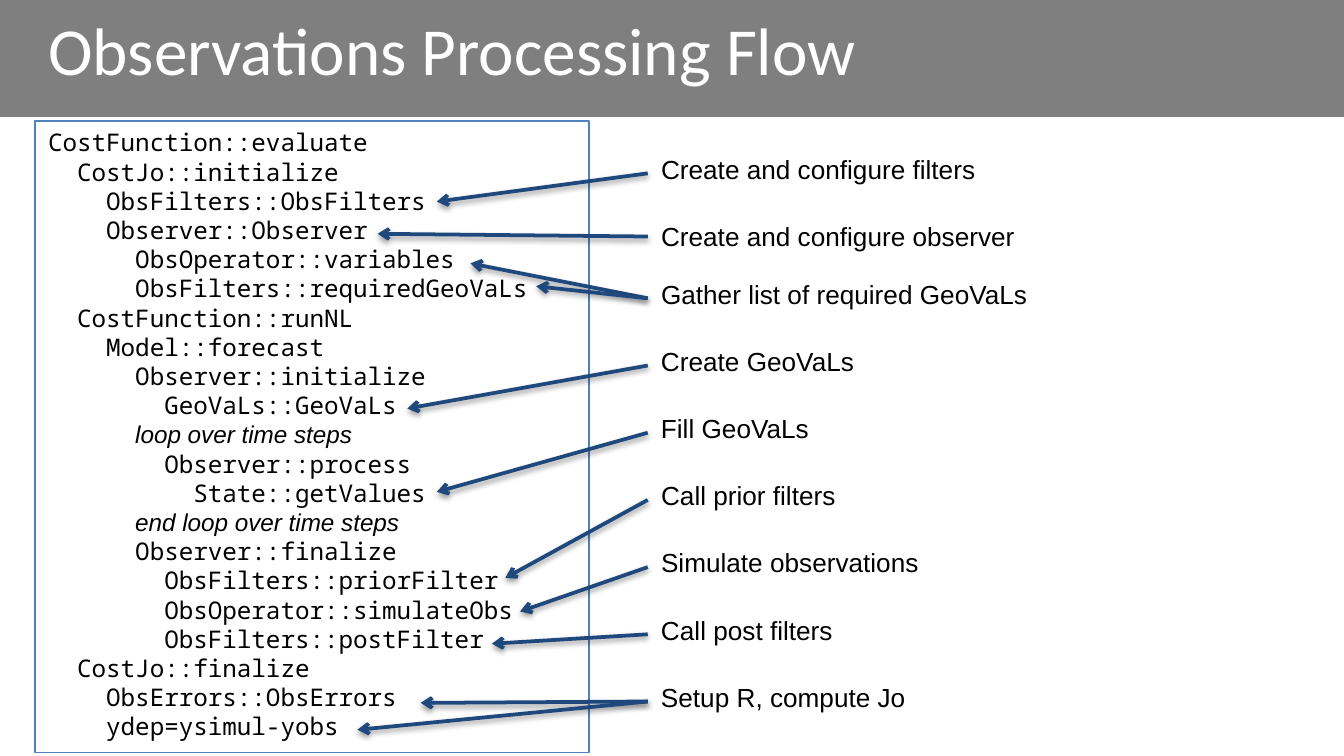
from dataclasses import dataclass

from lxml import etree
from pptx import Presentation
from pptx.dml.color import RGBColor
from pptx.enum.shapes import MSO_CONNECTOR, MSO_SHAPE
from pptx.enum.text import MSO_ANCHOR, PP_ALIGN
from pptx.oxml import parse_xml
from pptx.oxml.ns import nsdecls, qn
from pptx.shapes.autoshape import Shape
from pptx.slide import Slide
from pptx.text.text import _Paragraph
from pptx.util import Inches, Pt

RECTANGLE = MSO_SHAPE.RECTANGLE
STRAIGHT = MSO_CONNECTOR.STRAIGHT
LEFT = PP_ALIGN.LEFT
TOP = MSO_ANCHOR.TOP
MIDDLE = MSO_ANCHOR.MIDDLE
LEFT_SIDE = 1


@dataclass(frozen=True)
class Theme:
    black: RGBColor = RGBColor(0, 0, 0)
    white: RGBColor = RGBColor(255, 255, 255)
    border: RGBColor = RGBColor(0x4F, 0x81, 0xBD)
    arrow: RGBColor = RGBColor(0x1F, 0x49, 0x7D)
    title_font: str = "Calibri"
    code_font: str = "Noto Sans Mono"
    note_font: str = "Arial"
    title_size: float = 36
    code_size: float = 13
    note_size: float = 14
    code_pitch: float = 15.65


@dataclass(frozen=True)
class Call:
    depth: int
    text: str
    is_loop: bool = False


@dataclass(frozen=True)
class Note:
    text: str
    top: float
    width: float
    targets: tuple[tuple[float, float], ...]
    height: float = 0.4


THEME = Theme()
SLIDE_WIDTH = Inches(10)
SLIDE_HEIGHT = SLIDE_WIDTH * 9 // 16
NOTE_LEFT = 4.82

CALLS = (
    Call(0, "CostFunction::evaluate"),
    Call(1, "CostJo::initialize"),
    Call(2, "ObsFilters::ObsFilters"),
    Call(2, "Observer::Observer"),
    Call(3, "ObsOperator::variables"),
    Call(3, "ObsFilters::requiredGeoVaLs"),
    Call(1, "CostFunction::runNL"),
    Call(2, "Model::forecast"),
    Call(3, "Observer::initialize"),
    Call(4, "GeoVaLs::GeoVaLs"),
    Call(3, "loop over time steps", True),
    Call(4, "Observer::process"),
    Call(5, "State::getValues"),
    Call(3, "end loop over time steps", True),
    Call(3, "Observer::finalize"),
    Call(4, "ObsFilters::priorFilter"),
    Call(4, "ObsOperator::simulateObs"),
    Call(4, "ObsFilters::postFilter"),
    Call(1, "CostJo::finalize"),
    Call(2, "ObsErrors::ObsErrors"),
    Call(2, "ydep=ysimul-yobs"),
)

NOTES = (
    Note("Create and configure filters", 1.09, 3.01, ((3.25, 1.5),)),
    Note("Create and configure observer", 1.59, 2.85, ((2.81, 1.74),), 0.34),
    Note("Gather list of required GeoVaLs", 2.02, 3.42, ((3.5, 1.96), (3.99, 2.13))),
    Note("Create GeoVaLs", 2.52, 1.83, ((3.03, 3.04),)),
    Note("Fill GeoVaLs", 3.02, 1.44, ((3.25, 3.66),)),
    Note("Call prior filters", 3.52, 1.78, ((3.76, 4.3),)),
    Note("Simulate observations", 4.02, 2.48, ((3.87, 4.55),)),
    Note("Call post filters", 4.52, 1.73, ((3.66, 4.79),)),
    Note("Setup R, compute Jo", 5.02, 2.3, ((3.13, 5.23), (2.66, 5.43))),
)


def add_run(paragraph: _Paragraph, text: str, font: str, size: float,
            color: RGBColor, italic: bool = False) -> None:
    run = paragraph.add_run()
    run.text = text
    run.font.name = font
    run.font.size = Pt(size)
    run.font.color.rgb = color
    run.font.italic = italic


def add_band(slide: Slide) -> None:
    band = slide.shapes.add_shape(RECTANGLE, 0, 0, SLIDE_WIDTH, Inches(0.87))
    band.shadow.inherit = False
    band.fill.solid()
    band.fill.fore_color.rgb = THEME.black
    band.line.fill.background()
    color = next(band.element.spPr.iter(qn("a:srgbClr")))
    etree.SubElement(color, qn("a:alpha"), val="50000")
    slide.shapes.title.element.addprevious(band.element)


def add_title(slide: Slide, text: str) -> None:
    title = slide.shapes.title
    title.left, title.top = Inches(0.26), Inches(0.03)
    title.width, title.height = Inches(9.24), Inches(0.67)
    title.text_frame.vertical_anchor = MIDDLE
    paragraph = title.text_frame.paragraphs[0]
    paragraph.alignment = LEFT
    add_run(paragraph, text, THEME.title_font, THEME.title_size, THEME.white)


def add_call_tree(slide: Slide, calls: tuple[Call, ...]) -> None:
    tree = slide.shapes.add_shape(
        RECTANGLE, Inches(0.26), Inches(0.9), Inches(4.12), Inches(4.7))
    tree.shadow.inherit = False
    tree.fill.background()
    tree.line.color.rgb = THEME.border
    tree.line.width = Pt(1)
    frame = tree.text_frame
    frame.word_wrap = True
    frame.vertical_anchor = TOP
    for index, call in enumerate(calls):
        paragraph = frame.add_paragraph() if index else frame.paragraphs[0]
        paragraph.alignment = LEFT
        paragraph.line_spacing = Pt(THEME.code_pitch)
        indent = "  " * call.depth
        if call.is_loop:
            add_run(paragraph, indent, THEME.code_font, THEME.code_size, THEME.black)
            add_run(paragraph, call.text, THEME.note_font, THEME.code_size,
                    THEME.black, italic=True)
        else:
            add_run(paragraph, indent + call.text, THEME.code_font,
                    THEME.code_size, THEME.black)


def add_arrow(slide: Slide, label: Shape, target: tuple[float, float]) -> None:
    x, y = target
    arrow = slide.shapes.add_connector(
        STRAIGHT, label.left, label.top, Inches(x), Inches(y))
    arrow.begin_connect(label, LEFT_SIDE)
    arrow.line.color.rgb = THEME.arrow
    arrow.line.width = Pt(2)
    properties = arrow.element.spPr
    etree.SubElement(properties.find(qn("a:ln")), qn("a:tailEnd"), type="arrow")
    properties.append(parse_xml(
        f'<a:effectLst {nsdecls("a")}>'
        f'<a:outerShdw blurRad="{Pt(3.1)}" dist="{Pt(1.6)}" dir="5400000" rotWithShape="0">'
        f'<a:srgbClr val="{THEME.black}"><a:alpha val="38000"/></a:srgbClr>'
        '</a:outerShdw></a:effectLst>'))


def add_note(slide: Slide, note: Note) -> None:
    label = slide.shapes.add_textbox(
        Inches(NOTE_LEFT), Inches(note.top), Inches(note.width), Inches(note.height))
    label.text_frame.word_wrap = True
    add_run(label.text_frame.paragraphs[0], note.text, THEME.note_font,
            THEME.note_size, THEME.black)
    for target in note.targets:
        add_arrow(slide, label, target)


def main() -> None:
    presentation = Presentation()
    presentation.slide_width = SLIDE_WIDTH
    presentation.slide_height = SLIDE_HEIGHT
    slide = presentation.slides.add_slide(presentation.slide_layouts[5])
    add_band(slide)
    add_title(slide, "Observations Processing Flow")
    add_call_tree(slide, CALLS)
    for note in NOTES:
        add_note(slide, note)
    presentation.save("out.pptx")


if __name__ == "__main__":
    main()
